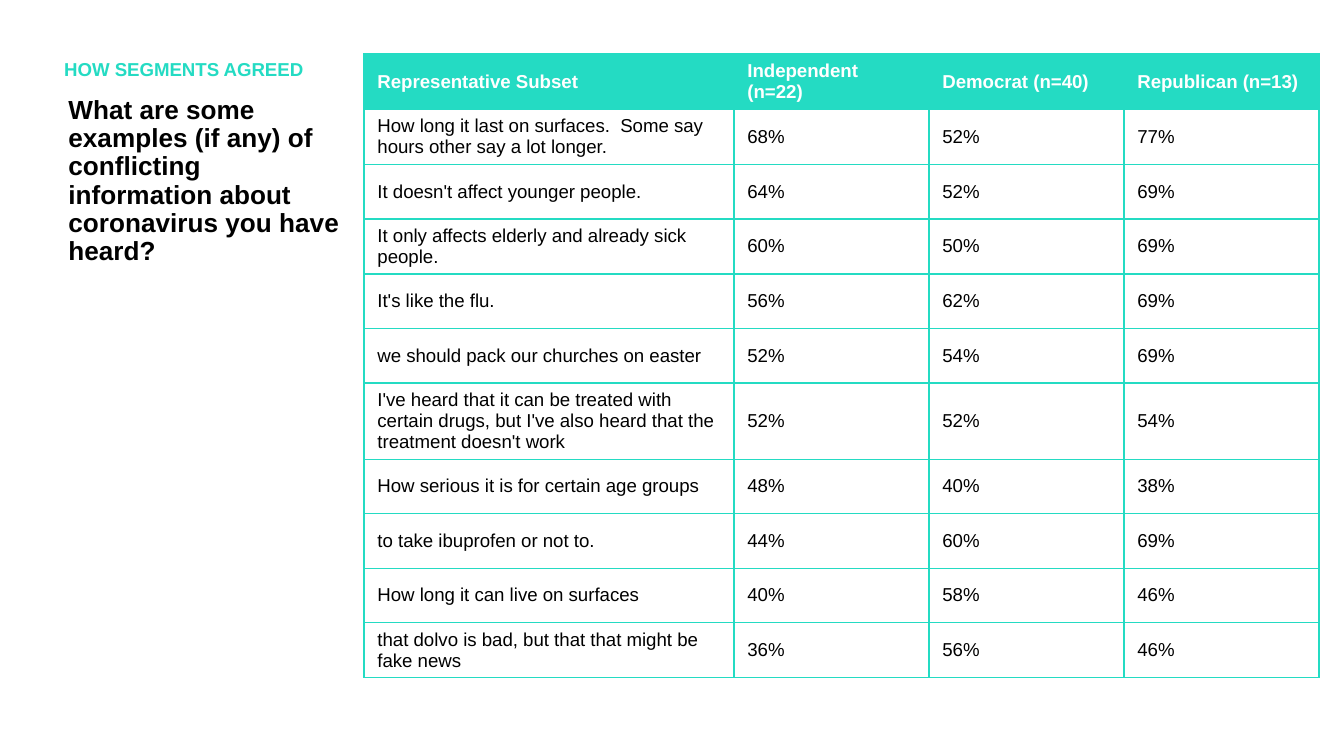
"""Build a slide with a table of how voter segments agreed on survey answers."""
from lxml.etree import SubElement
from pptx import Presentation
from pptx.dml.color import RGBColor
from pptx.enum.text import MSO_ANCHOR, MSO_AUTO_SIZE, PP_ALIGN
from pptx.oxml.ns import qn
from pptx.util import Pt

TEAL = RGBColor(0x24, 0xDB, 0xC3)
BLACK = RGBColor(0, 0, 0)
WHITE = RGBColor(255, 255, 255)
EMU_PER_PX = 914400 / 134.4

QUESTION = ("What are some examples (if any) of conflicting information "
            "about coronavirus you have heard?")
HEADER = ("Representative Subset", "Independent (n=22)", "Democrat (n=40)",
          "Republican (n=13)")
ANSWERS = [
    ("How long it last on surfaces.  Some say hours other say a lot longer.", 68, 52, 77),
    ("It doesn't affect younger people.", 64, 52, 69),
    ("It only affects elderly and already sick people.", 60, 50, 69),
    ("It's like the flu.", 56, 62, 69),
    ("we should pack our churches on easter", 52, 54, 69),
    ("I've heard that it can be treated with certain drugs, but I've also "
     "heard that the treatment doesn't work", 52, 52, 54),
    ("How serious it is for certain age groups", 48, 40, 38),
    ("to take ibuprofen or not to.", 44, 60, 69),
    ("How long it can live on surfaces", 40, 58, 46),
    ("that dolvo is bad, but that that might be fake news", 36, 56, 46),
]


def px(n):
    return round(n * EMU_PER_PX)


def set_text(tf, text, size=10, color=BLACK, bold=False, spacing=None):
    p = tf.paragraphs[0]
    p.alignment = PP_ALIGN.LEFT
    p.line_spacing = spacing
    r = p.add_run()
    r.text = text
    r.font.name = "Arial"
    r.font.size = Pt(size)
    r.font.bold = bold
    r.font.color.rgb = color


def format_heading(sp, text, box, **fmt):
    sp.left, sp.top, sp.width, sp.height = map(px, box)
    tf = sp.text_frame
    tf.word_wrap = True
    tf.auto_size = MSO_AUTO_SIZE.NONE
    tf.vertical_anchor = MSO_ANCHOR.TOP
    set_text(tf, text, bold=True, spacing=0.9, **fmt)


def set_borders(cell, color, width):
    tc_pr = cell._tc.get_or_add_tcPr()
    for i, side in enumerate(("lnL", "lnR", "lnT", "lnB")):
        ln = SubElement(tc_pr, qn(f"a:{side}"), w=str(Pt(width)))
        fill = SubElement(ln, qn("a:solidFill"))
        SubElement(fill, qn("a:srgbClr"), val=str(color))
        tc_pr.remove(ln)
        tc_pr.insert(i, ln)


def format_cell(cell, text, fill, **fmt):
    cell.vertical_anchor = MSO_ANCHOR.MIDDLE
    cell.fill.solid()
    cell.fill.fore_color.rgb = fill
    set_borders(cell, TEAL, 0.75)
    set_text(cell.text_frame, text, **fmt)


def add_answer_table(s):
    widths = (370, 195, 195, 195)
    rows = len(ANSWERS) + 1
    table = s.shapes.add_table(rows, len(widths), px(364), px(54),
                               px(sum(widths)), px(600)).table
    for column, width in zip(table.columns, widths):
        column.width = px(width)
    for cell, text in zip(table.rows[0].cells, HEADER):
        format_cell(cell, text, TEAL, color=WHITE, bold=True)
    for i, (answer, *shares) in enumerate(ANSWERS, 1):
        texts = [answer] + [f"{share}%" for share in shares]
        for cell, text in zip(table.rows[i].cells, texts):
            format_cell(cell, text, WHITE)


def main():
    prs = Presentation()
    prs.slide_width, prs.slide_height = px(1344), px(756)
    s = prs.slides.add_slide(prs.slide_layouts[5])
    format_heading(s.shapes.title, QUESTION, (55, 90, 309, 593), size=14)
    kicker = s.shapes.add_textbox(0, 0, 0, 0)
    format_heading(kicker, "HOW SEGMENTS AGREED", (51, 54, 312, 37), color=TEAL)
    add_answer_table(s)
    prs.save("out.pptx")


if __name__ == "__main__":
    main()
